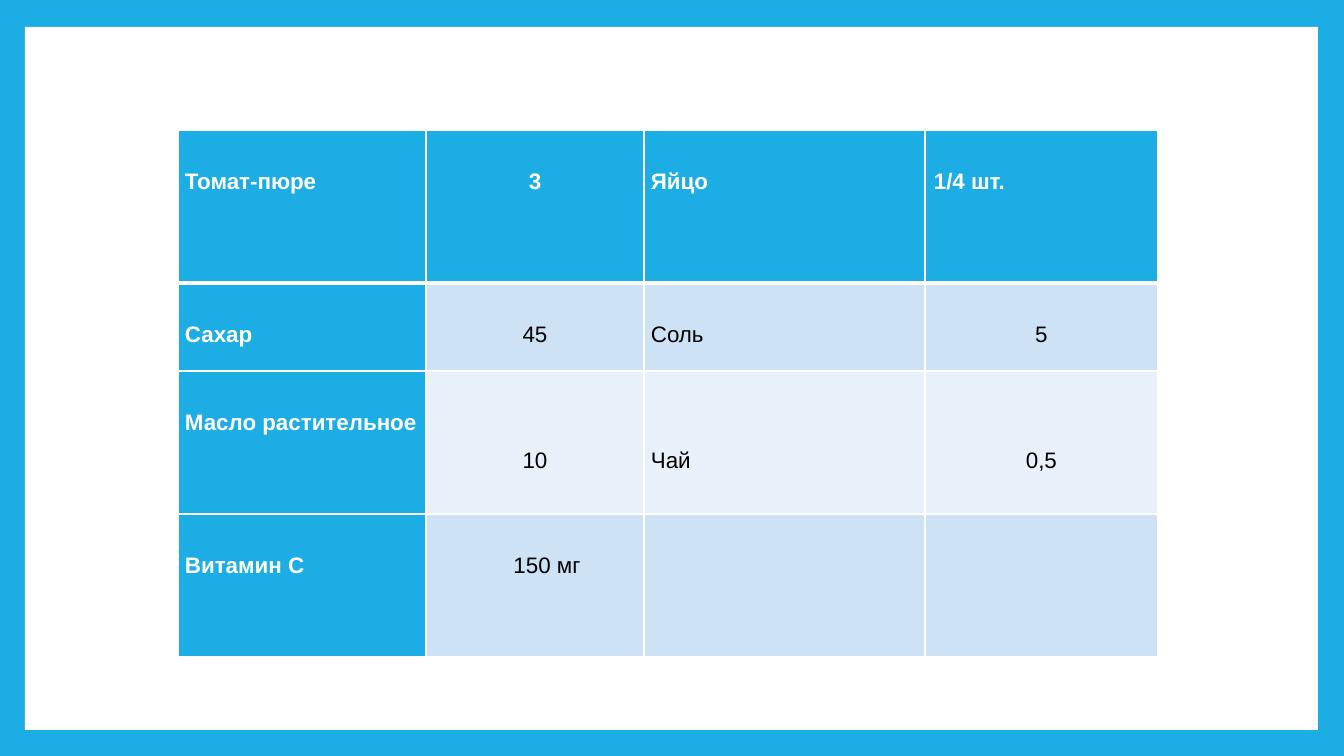
from typing import NamedTuple

from lxml import etree
from pptx import Presentation, util as u
from pptx.dml.color import RGBColor
from pptx.enum import shapes, text
from pptx.oxml.ns import qn
from pptx.slide import Slide
from pptx.table import _Cell

PX = 12192000 / 1344
COLORS = {
    "accent": "1CADE4",
    "white": "FFFFFF",
    "black": "000000",
    "band_dark": "CDE3F5",
    "band_light": "E8F1FA",
}
SIDE_MARGIN = 7
LINE_STEP = 38  # one text line plus the space after it


class Entry(NamedTuple):
    text: str = ""
    centered: bool = False
    lines_above: int = 1
    indent: int = 0


COLUMN_WIDTHS = [248, 218, 281, 233]
ROW_HEIGHTS = [153, 88, 143, 143]
INGREDIENTS = [
    [Entry("Томат-пюре"), Entry("3", True), Entry("Яйцо"), Entry("1/4 шт.", indent=2)],
    [Entry("Сахар"), Entry("45", True), Entry("Соль"), Entry("5", True)],
    [Entry("Масло растительное"), Entry("10", True, 2), Entry("Чай", False, 2),
     Entry("0,5", True, 2)],
    [Entry("Витамин С"), Entry("150 мг", True, indent=24), Entry(), Entry()],
]


def px(n: int) -> u.Emu:
    return u.Emu(round(n * PX))


def rgb(name: str) -> RGBColor:
    return RGBColor.from_string(COLORS[name])


def set_borders(cell: _Cell, row: int) -> None:
    """White grid lines, heavier between the header and the body."""
    widths = {"L": 1, "R": 1, "T": 3 if row == 1 else 1, "B": 3 if row == 0 else 1}
    tc_pr = cell._tc.get_or_add_tcPr()
    for side, width in widths.items():
        ln = etree.SubElement(tc_pr, qn(f"a:ln{side}"), w=str(u.Pt(width)))
        fill = etree.SubElement(ln, qn("a:solidFill"))
        etree.SubElement(fill, qn("a:srgbClr"), val=COLORS["white"])


def fill_cell(cell: _Cell, entry: Entry, row: int, col: int) -> None:
    heading = row == 0 or col == 0
    band = "band_dark" if row % 2 else "band_light"
    set_borders(cell, row)
    cell.fill.solid()
    cell.fill.fore_color.rgb = rgb("accent" if heading else band)
    cell.margin_left = px(SIDE_MARGIN + entry.indent)
    cell.margin_right = px(SIDE_MARGIN)
    cell.margin_top = px(LINE_STEP * entry.lines_above)
    cell.margin_bottom = 0
    if not entry.text:
        return
    p = cell.text_frame.paragraphs[0]
    p.text = entry.text
    p.alignment = text.PP_ALIGN.CENTER if entry.centered else text.PP_ALIGN.LEFT
    p.line_spacing = 1.05
    p.font.name = "Arial"
    p.font.size = u.Pt(16)
    p.font.bold = heading
    p.font.color.rgb = rgb("white" if heading else "black")


def add_frame(s: Slide) -> None:
    """Accent background with a white panel inside."""
    s.background.fill.solid()
    s.background.fill.fore_color.rgb = rgb("accent")
    sp = s.shapes.add_shape(
        shapes.MSO_SHAPE.RECTANGLE, px(25), px(27), px(1293), px(703))
    sp.shadow.inherit = False
    sp.fill.solid()
    sp.fill.fore_color.rgb = rgb("white")
    sp.line.fill.background()


def add_ingredients(s: Slide) -> None:
    table = s.shapes.add_table(
        len(ROW_HEIGHTS), len(COLUMN_WIDTHS), px(178), px(130),
        px(sum(COLUMN_WIDTHS)), px(sum(ROW_HEIGHTS))).table
    table.first_col = True
    for column, width in zip(table.columns, COLUMN_WIDTHS):
        column.width = px(width)
    for row, height in zip(table.rows, ROW_HEIGHTS):
        row.height = px(height)
    for i, entries in enumerate(INGREDIENTS):
        for j, entry in enumerate(entries):
            fill_cell(table.cell(i, j), entry, i, j)


def main() -> None:
    prs = Presentation()
    prs.slide_width, prs.slide_height = px(1344), px(756)
    s = prs.slides.add_slide(prs.slide_layouts[6])
    add_frame(s)
    add_ingredients(s)
    prs.save("out.pptx")


if __name__ == "__main__":
    main()
